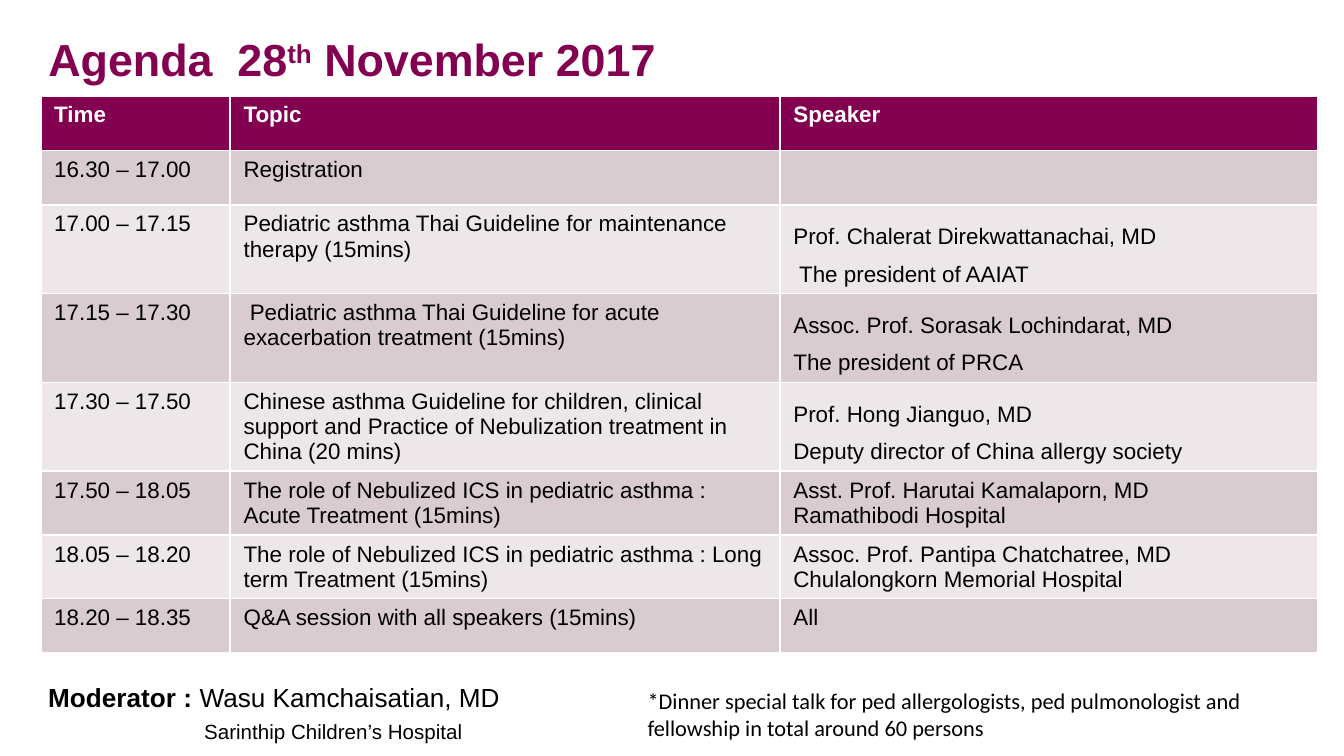
from typing import NamedTuple

from pptx import Presentation
from pptx.dml.color import RGBColor
from pptx.enum.text import MSO_ANCHOR, MSO_AUTO_SIZE, PP_ALIGN
from pptx.util import Cm, Pt

MIDDLE = MSO_ANCHOR.MIDDLE
NO_FIT = MSO_AUTO_SIZE.NONE
LEFT = PP_ALIGN.LEFT

PLUM, BLACK, WHITE = "830051", "000000", "FFFFFF"
BANDS = ("D9CCD0", "EDE7E9")
COLUMN_WIDTHS = (3.58, 10.39, 10.16)
ROW_HEIGHT = 1.03


class Session(NamedTuple):
    time: str
    topic: str
    speaker: str
    spacing: float = 1.0


SESSIONS = [
    Session("16.30 – 17.00", "Registration", ""),
    Session("17.00 – 17.15",
            "Pediatric asthma Thai Guideline for maintenance therapy (15mins)",
            "Prof. Chalerat Direkwattanachai, MD\n The president of AAIAT", 1.5),
    Session("17.15 – 17.30",
            " Pediatric asthma Thai Guideline for acute exacerbation treatment (15mins)",
            "Assoc. Prof. Sorasak Lochindarat, MD\nThe president of PRCA", 1.5),
    Session("17.30 – 17.50",
            "Chinese asthma Guideline for children, clinical support and "
            "Practice of Nebulization treatment in China (20 mins)",
            "Prof. Hong Jianguo, MD\nDeputy director of China allergy society", 1.5),
    Session("17.50 – 18.05",
            "The role of Nebulized ICS in pediatric asthma : Acute Treatment (15mins)",
            "Asst. Prof. Harutai Kamalaporn, MD\nRamathibodi Hospital"),
    Session("18.05 – 18.20",
            "The role of Nebulized ICS in pediatric asthma : Long term Treatment (15mins)",
            "Assoc. Prof. Pantipa Chatchatree, MD\nChulalongkorn Memorial Hospital"),
    Session("18.20 – 18.35", "Q&A session with all speakers (15mins)", "All"),
]


def rgb(color: str) -> RGBColor:
    return RGBColor.from_string(color)


def style(font, size: float, color: str = BLACK, bold: bool = False,
          name: str = "Arial") -> None:
    font.name, font.size, font.bold = name, Pt(size), bold
    font.color.rgb = rgb(color)


def add_run(p, text: str, size: float, color: str = BLACK, bold: bool = False):
    r = p.add_run()
    r.text = text
    style(r.font, size, color, bold)
    return r


def fill_cell(cell, text: str, fill: str, color: str = BLACK,
              bold: bool = False, spacing: float = 1.0) -> None:
    cell.fill.solid()
    cell.fill.fore_color.rgb = rgb(fill)
    cell.text_frame.text = text
    for p in cell.text_frame.paragraphs:
        p.line_spacing = spacing
        style(p.font, 12, color, bold)
        for r in p.runs:
            style(r.font, 12, color, bold)


def add_text_box(s, left: float, top: float, width: float, height: float):
    tf = s.shapes.add_textbox(Cm(left), Cm(top), Cm(width), Cm(height)).text_frame
    tf.word_wrap = True
    return tf


prs = Presentation()
prs.slide_width, prs.slide_height = Cm(25.4), Cm(14.28)
s = prs.slides.add_slide(prs.slide_layouts[5])

# Title
title = s.shapes.title
title.left, title.top, title.width, title.height = Cm(0.66), Cm(0.41), Cm(24.36), Cm(1.4)
tf = title.text_frame
tf.auto_size, tf.vertical_anchor = NO_FIT, MIDDLE
p = tf.paragraphs[0]
p.alignment = LEFT
add_run(p, "Agenda  28", 24, PLUM, True)
ordinal = add_run(p, "th", 24, PLUM, True)
ordinal.font._element.set("baseline", "30000")
add_run(p, " November 2017", 24, PLUM, True)

# Agenda table
table = s.shapes.add_table(
    len(SESSIONS) + 1, len(COLUMN_WIDTHS), Cm(0.77), Cm(1.81),
    Cm(sum(COLUMN_WIDTHS)), Cm(ROW_HEIGHT * (len(SESSIONS) + 1))).table
for column, width in zip(table.columns, COLUMN_WIDTHS):
    column.width = Cm(width)
for row in table.rows:
    row.height = Cm(ROW_HEIGHT)
for col, heading in enumerate(("Time", "Topic", "Speaker")):
    fill_cell(table.cell(0, col), heading, PLUM, WHITE, True)
for i, session in enumerate(SESSIONS):
    band = BANDS[i % 2]
    fill_cell(table.cell(i + 1, 0), session.time, band)
    fill_cell(table.cell(i + 1, 1), session.topic, band)
    fill_cell(table.cell(i + 1, 2), session.speaker, band, spacing=session.spacing)

# Moderator, with the hospital indented below the name
tf = add_text_box(s, 0.66, 12.75, 9.09, 1.5)
p = tf.paragraphs[0]
add_run(p, "Moderator : ", 14, bold=True)
add_run(p, "Wasu Kamchaisatian, MD", 14)
p = tf.add_paragraph()
p._p.get_or_add_pPr().set("marL", str(Cm(2.95)))
p.space_before = Pt(3)
add_run(p, "Sarinthip Children’s Hospital", 11)

# Audience note
tf = add_text_box(s, 11.99, 12.85, 12.7, 1.27)
tf.text = ("*Dinner special talk for ped allergologists, ped pulmonologist and "
           "fellowship in total around 60 persons")
style(tf.paragraphs[0].runs[0].font, 12, name="Calibri")

prs.save("out.pptx")
